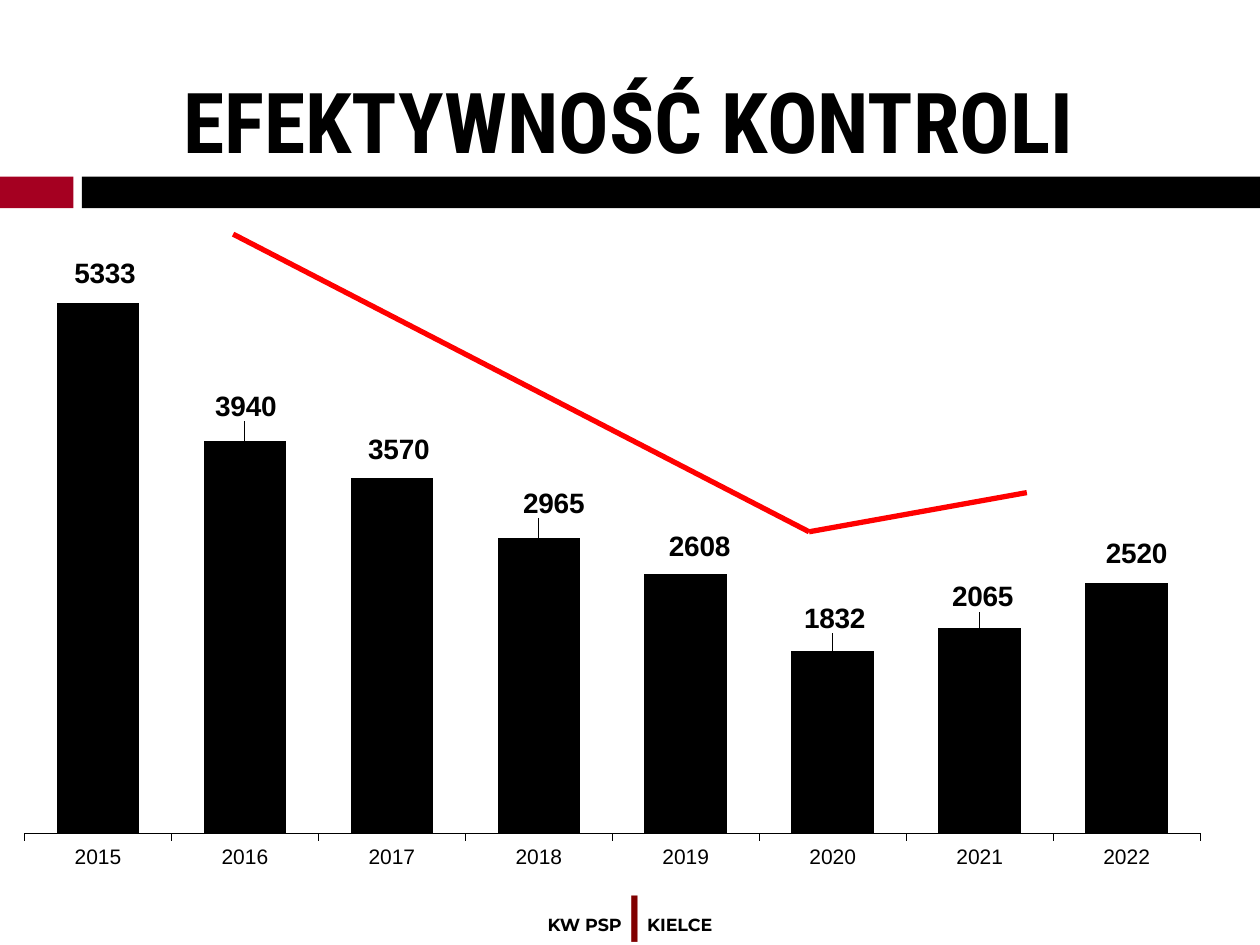
from lxml import etree
from pptx import Presentation
from pptx.chart.data import CategoryChartData
from pptx.dml.color import RGBColor
from pptx.enum.chart import XL_CHART_TYPE, XL_LABEL_POSITION, XL_TICK_LABEL_POSITION, XL_TICK_MARK
from pptx.enum.shapes import MSO_CONNECTOR, MSO_SHAPE
from pptx.enum.text import MSO_ANCHOR, MSO_AUTO_SIZE, PP_ALIGN
from pptx.oxml import parse_xml
from pptx.oxml.ns import nsdecls, qn
from pptx.util import Cm, Pt

COLUMNS = XL_CHART_TYPE.COLUMN_CLUSTERED
OUTSIDE = XL_LABEL_POSITION.OUTSIDE_END
STRAIGHT = MSO_CONNECTOR.STRAIGHT
RECT = MSO_SHAPE.RECTANGLE
CENTER = PP_ALIGN.CENTER
TOP, MIDDLE = MSO_ANCHOR.TOP, MSO_ANCHOR.MIDDLE

THEME = {
    "ink": "000000", "crimson": "A50021", "maroon": "800000", "trend": "FF0000",
    "title_font": "Roboto Condensed", "footer_font": "Montserrat", "body_font": "Arial",
    "title": 48, "label": 16, "axis": 12, "footer": 10, "divider": 28,
}

TITLE = "EFEKTYWNOŚĆ KONTROLI"
BANDS = [(0, 1.48, "crimson"), (1.65, 23.75, "ink")]
FOOTER = [
    ("KW PSP", "footer", "footer_font", "ink"),
    (" ", "axis", "body_font", "ink"),
    ("|", "divider", "body_font", "maroon"),
    (" ", "axis", "body_font", "ink"),
    ("KIELCE", "footer", "footer_font", "ink"),
]
# year, value, label shift in cm
CONTROLS = [
    ("2015", 5333, 0.14, -0.18), ("2016", 3940, 0.02, -0.3),
    ("2017", 3570, 0.14, -0.18), ("2018", 2965, 0.3, -0.3),
    ("2019", 2608, 0.28, -0.14), ("2020", 1832, 0.04, -0.26),
    ("2021", 2065, 0.06, -0.22), ("2022", 2520, 0.2, -0.18),
]
CHART_W, CHART_H = 24.69, 13.23
PLOT = {"x": 0.02, "y": 0.02, "w": 0.96, "h": 0.91}
TREND = [(4.7, 4.72), (16.31, 10.72), (20.7, 9.93)]


def color(name):
    return RGBColor.from_string(THEME[name])


def style(font, size, face, ink, bold=True):
    font.size, font.name, font.bold = Pt(THEME[size]), THEME[face], bold
    font.color.rgb = color(ink)


def layout_xml(inner=False, **fractions):
    target = '<c:layoutTarget val="inner"/>' if inner else ""
    modes = '<c:xMode val="edge"/><c:yMode val="edge"/>' if inner else ""
    values = "".join(f'<c:{k} val="{v:.4f}"/>' for k, v in fractions.items())
    return parse_xml(f'<c:layout {nsdecls("c")}><c:manualLayout>{target}{modes}{values}'
                     '</c:manualLayout></c:layout>')


def add_title(s):
    sp = s.shapes.title
    sp.left, sp.top, sp.width, sp.height = Cm(3.48), Cm(1.12), Cm(18.39), Cm(1.55)
    tf = sp.text_frame
    tf.text = TITLE
    tf.word_wrap, tf.auto_size, tf.vertical_anchor = False, MSO_AUTO_SIZE.NONE, TOP
    tf.margin_left = tf.margin_right = tf.margin_bottom = 0
    tf.margin_top = Cm(0.28)
    p = tf.paragraphs[0]
    p.alignment, p.line_spacing = CENTER, 1.0
    style(p.runs[0].font, "title", "title_font", "ink")


def add_bands(s):
    for left, width, fill in BANDS:
        sp = s.shapes.add_shape(RECT, Cm(left), Cm(3.56), Cm(width), Cm(0.64))
        sp.shadow.inherit = False
        sp.fill.solid()
        sp.fill.fore_color.rgb = color(fill)
        sp.line.fill.background()


def add_footer(s):
    tf = s.shapes.add_textbox(0, Cm(18.03), Cm(25.4), Cm(0.71)).text_frame
    tf.word_wrap, tf.vertical_anchor = True, MIDDLE
    p = tf.paragraphs[0]
    p.alignment = CENTER
    for text, size, face, ink in FOOTER:
        r = p.add_run()
        r.text = text
        style(r.font, size, face, ink)


def add_chart(s):
    data = CategoryChartData()
    data.categories = [row[0] for row in CONTROLS]
    data.add_series("Series 1", [row[1] for row in CONTROLS])
    chart = s.shapes.add_chart(COLUMNS, 0, Cm(4.5), Cm(CHART_W), Cm(CHART_H), data).chart
    chart.has_legend = chart.has_title = False
    style(chart.font, "axis", "body_font", "ink", False)

    years, values = chart.category_axis, chart.value_axis
    years.major_tick_mark = XL_TICK_MARK.OUTSIDE
    years.tick_label_position = XL_TICK_LABEL_POSITION.LOW
    years.format.line.color.rgb = color("ink")
    years.format.line.width = Pt(0.75)
    style(years.tick_labels.font, "axis", "body_font", "ink", False)
    values.visible = values.has_major_gridlines = False
    values.minimum_scale, values.maximum_scale = 0, 6000

    plot = chart.plots[0]
    plot.gap_width, plot.vary_by_categories = 78, False
    series = plot.series[0]
    series.format.fill.solid()
    series.format.fill.fore_color.rgb = color("ink")
    labels = series.data_labels
    labels.show_value, labels.position = True, OUTSIDE
    style(labels.font, "label", "body_font", "ink")
    for i, (_, _, dx, dy) in enumerate(CONTROLS):
        label = series.points[i].data_label
        style(label.font, "label", "body_font", "ink")
        label.position = OUTSIDE
        idx = labels._element.findall(qn("c:dLbl"))[i].find(qn("c:idx"))
        idx.addnext(layout_xml(x=dx / CHART_W, y=dy / CHART_H))

    area = chart._chartSpace.chart.plotArea
    for old in area.findall(qn("c:layout")):
        area.remove(old)
    area.insert(0, layout_xml(inner=True, **PLOT))


def add_trend(s):
    group = s.shapes.add_group_shape()
    start, low, end = TREND
    for here in (start, end):
        line = group.shapes.add_connector(STRAIGHT, *map(Cm, here + low))
        line.line.color.rgb = color("trend")
        line.line.width = Pt(3)
        etree.SubElement(line._element.spPr, qn("a:effectLst"))


def main():
    prs = Presentation()
    prs.slide_width, prs.slide_height = Cm(25.4), Cm(19.05)
    s = prs.slides.add_slide(prs.slide_layouts[5])
    add_bands(s)
    add_title(s)
    add_footer(s)
    add_chart(s)
    add_trend(s)
    prs.save("out.pptx")


if __name__ == "__main__":
    main()
